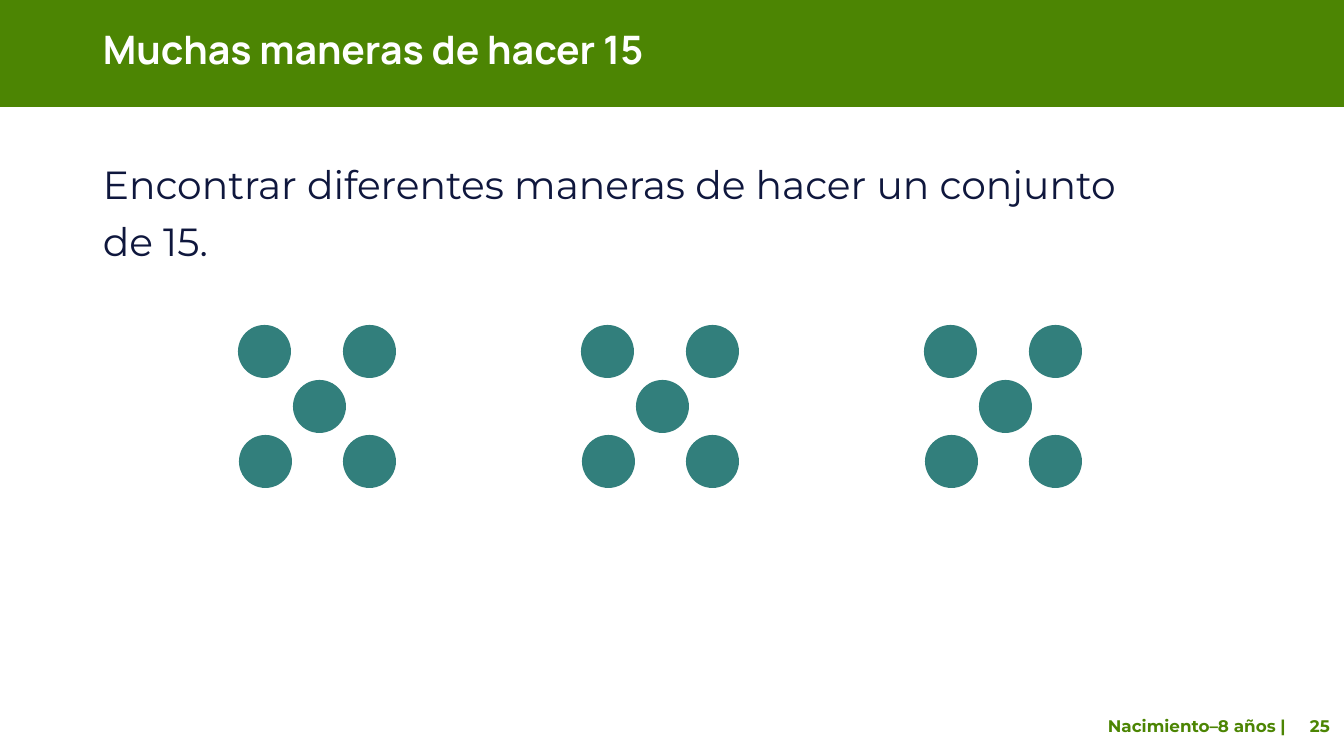
from lxml import etree
from pptx import Presentation
from pptx.dml.color import RGBColor
from pptx.enum.shapes import MSO_SHAPE
from pptx.enum.text import MSO_ANCHOR
from pptx.oxml.ns import qn
from pptx.util import Pt

RECT, OVAL = MSO_SHAPE.RECTANGLE, MSO_SHAPE.OVAL
TOP, MIDDLE = MSO_ANCHOR.TOP, MSO_ANCHOR.MIDDLE
COLORS = {"green": "4C8503", "white": "FFFFFF", "navy": "0F173D", "teal": "327F7C"}
DOT = 53
DOTS = [(0, 0), (105, 0), (105, 110), (1, 110), (55, 55)]


def px(n):
    """Turn pixels into EMU."""
    return round(n * 914400 / 100.8)


def color(name):
    """Look up a named colour."""
    return RGBColor.from_string(COLORS[name])


def add_solid(slide, kind, box, fill):
    """Add a filled shape without outline or shadow."""
    shape = slide.shapes.add_shape(kind, *map(px, box))
    shape.shadow.inherit = False
    shape.fill.solid()
    shape.fill.fore_color.rgb = color(fill)
    shape.line.fill.background()


def add_text(slide, box, text, font, size, ink, bold=False, space=1.0, anchor=TOP, tab=None):
    """Add a one-paragraph text box, with a right tab stop if asked."""
    frame = slide.shapes.add_textbox(*map(px, box)).text_frame
    frame.word_wrap = True
    frame.vertical_anchor = anchor
    para = frame.paragraphs[0]
    para.text = text
    para.line_spacing = space
    if tab:
        stops = etree.SubElement(para._p.get_or_add_pPr(), qn("a:tabLst"))
        etree.SubElement(stops, qn("a:tab"), pos=str(px(tab)), algn="r")
    for run in para.runs:
        run.font.name = font
        run.font.size = Pt(size)
        run.font.bold = bold
        run.font.color.rgb = color(ink)


def add_five(slide, left, top):
    """Add five dots laid out as on a die."""
    for x, y in DOTS:
        add_solid(slide, OVAL, (left + x, top + y, DOT, DOT), "teal")


def main():
    """Build and save the slide."""
    deck = Presentation()
    deck.slide_width, deck.slide_height = px(1344), px(756)
    slide = deck.slides.add_slide(deck.slide_layouts[6])
    add_solid(slide, RECT, (0, 0, 1344, 107), "green")
    add_text(slide, (1098, 706, 243, 40), "Nacimiento–8 años |\t25",
             "Montserrat", 12, "green", bold=True, anchor=MIDDLE, tab=222)
    add_text(slide, (93, 26, 1251, 53), "Muchas maneras de hacer 15",
             "Manrope", 28, "white", bold=True, space=0.9)
    add_text(slide, (93, 146, 1056, 138),
             "Encontrar diferentes maneras de hacer un conjunto de 15.",
             "Montserrat", 28, "navy", space=1.2)
    for group in range(3):
        add_five(slide, 238 + 343 * group, 325)
    deck.save("out.pptx")


if __name__ == "__main__":
    main()
